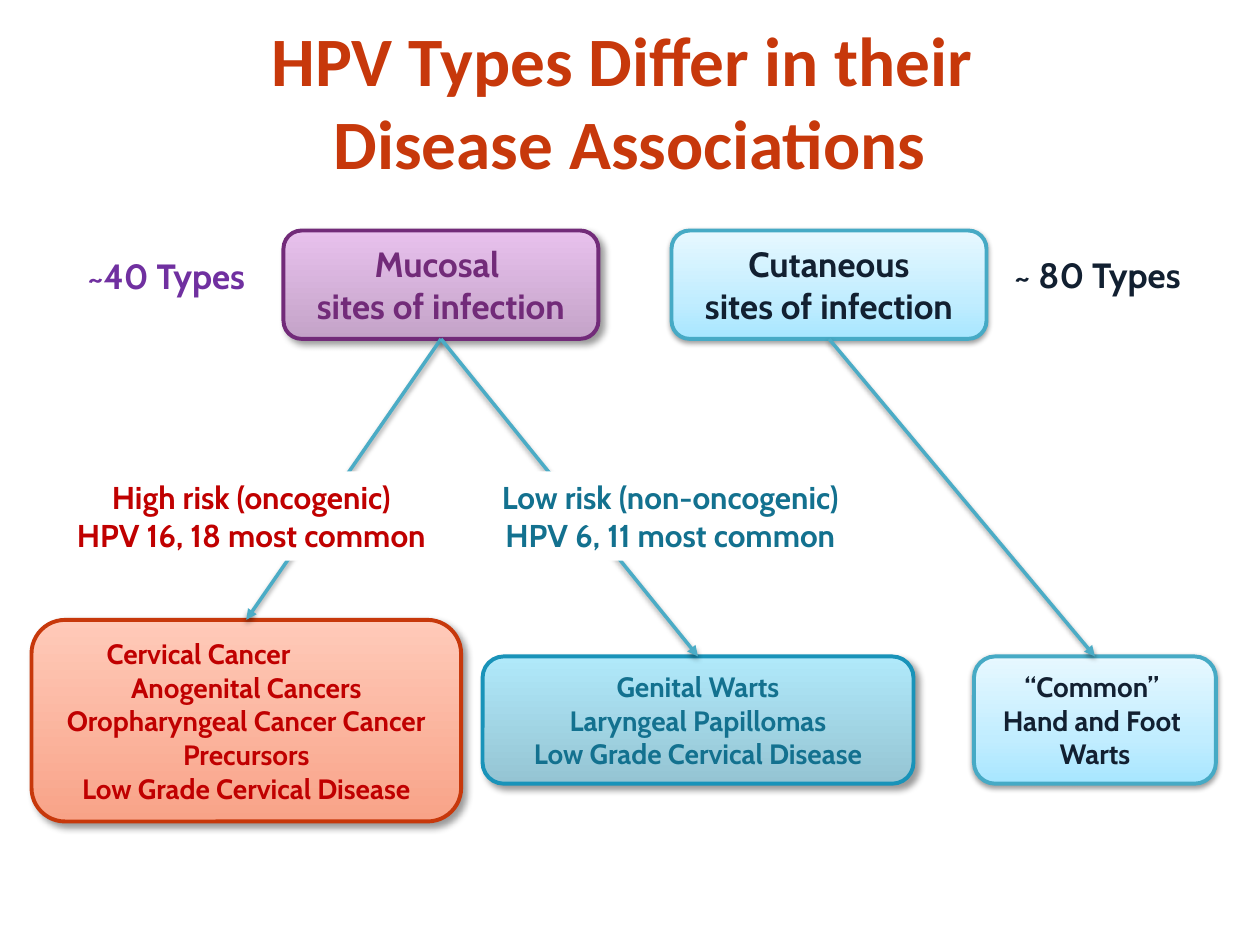
from pptx import Presentation
from pptx import util as u
from pptx.dml.color import RGBColor
from pptx.enum import shapes, text
from pptx.oxml import parse_xml
from pptx.oxml.ns import nsdecls, qn

# Content: a paragraph is a list of lines
TITLE = [["HPV Types Differ in their ", "Disease Associations"]]
SOFT = (38, 3.1, 1.6, 90)   # shadow: opacity %, blur pt, distance pt, angle
DEEP = (40, 4, 3, 45)
PALE_BLUE = [(0, "A7E6FF"), (35, "C1EDFF"), (100, "E7F8FF")]
BOXES = {
    "mucosal": dict(at=(2.25, 1.83, 2.5, 0.86), size=20, color="722B79", line="722B79",
                    stops=[(0, "C4A3C8"), (100, "E8C1ED")], shadow=DEEP, wrap=False,
                    paras=[["Mucosal "], ["sites of infection"]]),
    "cutaneous": dict(at=(5.33, 1.83, 2.5, 0.86), size=20, color="122031", line="46AAC5",
                      stops=PALE_BLUE, shadow=SOFT, wrap=False,
                      paras=[["Cutaneous"], ["sites of infection"]]),
    "common warts": dict(at=(7.73, 5.21, 1.92, 1.01), size=16, color="122031", line="46AAC5",
                         stops=PALE_BLUE, shadow=SOFT, wrap=False,
                         paras=[["“Common” ", "Hand and Foot "], ["Warts"]]),
    "low risk": dict(at=(3.83, 5.21, 3.42, 1.01), size=16, color="13718F", line="1993B9",
                     stops=[(0, "95C4D3"), (100, "B0E9FA")], shadow=DEEP, wrap=True,
                     paras=[["Genital Warts"], ["Laryngeal Papillomas"],
                            ["Low Grade Cervical Disease"]]),
    "high risk": dict(at=(0.25, 4.92, 3.41, 1.6), size=16, color="C00000", line="C7380B",
                      stops=[(0, "F8A388"), (100, "FFCAB9")], shadow=DEEP, wrap=True,
                      paras=[["Cervical Cancer"],
                             ["Anogenital Cancers", "Oropharyngeal Cancer Cancer", "Precursors"],
                             ["Low Grade Cervical Disease"]]),
}
ARROWS = [("mucosal", "high risk"), ("mucosal", "low risk"), ("cutaneous", "common warts")]
RISK_LABELS = [
    ((0.33, 3.74, 3.33, 0.71), "C00000", [["High risk (oncogenic)", "HPV 16, 18 most common"]]),
    ((3.66, 3.74, 3.32, 0.71), "13718F", [["Low risk (non-oncogenic)", "HPV 6, 11 most common"]]),
]
COUNTS = [
    ((0.54, 1.97, 1.62, 0.44), "7030A0", [["~40 Types "]]),
    ((7.75, 1.96, 1.92, 0.44), "122031", [["~ 80 Types"]]),
]


def rgb(value):
    return RGBColor.from_string(value)


def inches(at):
    return [u.Inches(value) for value in at]


def write(shape, paras, size, color, font="Cabin", wrap=True):
    frame = shape.text_frame
    frame.word_wrap = wrap
    frame.vertical_anchor = text.MSO_ANCHOR.MIDDLE
    for i, lines in enumerate(paras):
        para = frame.paragraphs[0] if i == 0 else frame.add_paragraph()
        para.alignment = text.PP_ALIGN.CENTER
        for j, line in enumerate(lines):
            if j:
                para.add_line_break()
            span = para.add_run()
            span.text = line
            span.font.name, span.font.size, span.font.bold = font, u.Pt(size), True
            span.font.color.rgb = rgb(color)


def indent_first(shape, indent):
    """Left-align the first paragraph at an indent; the others keep none."""
    for i, para in enumerate(shape.text_frame.paragraphs):
        margin = 0 if i else u.Inches(indent)
        properties = para._p.get_or_add_pPr()
        properties.set("marL", str(margin))
        properties.set("indent", "0")
    shape.text_frame.paragraphs[0].alignment = text.PP_ALIGN.LEFT


def add_shadow(shape, opacity, blur, distance, angle):
    properties = shape._element.spPr
    for old in properties.findall(qn("a:effectLst")):
        properties.remove(old)
    properties.append(parse_xml(
        f'<a:effectLst {nsdecls("a")}><a:outerShdw blurRad="{u.Pt(blur)}" dist="{u.Pt(distance)}"'
        f' dir="{angle * 60000}" rotWithShape="0"><a:srgbClr val="000000">'
        f'<a:alpha val="{opacity * 1000}"/></a:srgbClr></a:outerShdw></a:effectLst>'))


def fill_gradient(shape, stops):
    shape.fill.gradient()
    shape.fill.gradient_angle = 90   # first stop at the bottom
    stop_list = shape._element.spPr.find(".//" + qn("a:gsLst"))
    for old in list(stop_list):
        stop_list.remove(old)
    for position, color in stops:
        stop_list.append(parse_xml(f'<a:gs {nsdecls("a")} pos="{position * 1000}">'
                                   f'<a:srgbClr val="{color}"/></a:gs>'))


def add_box(page, at, paras, size, color, line, stops, shadow, wrap):
    box = page.shapes.add_shape(shapes.MSO_SHAPE.ROUNDED_RECTANGLE, *inches(at))
    fill_gradient(box, stops)
    box.line.color.rgb = rgb(line)
    box.line.width = u.Pt(2.25)
    add_shadow(box, *shadow)
    write(box, paras, size, color, wrap=wrap)
    return box


def add_arrow(page, start, end):
    arrow = page.shapes.add_connector(shapes.MSO_CONNECTOR.STRAIGHT, 0, 0, 0, 0)
    arrow.begin_connect(start, 2)
    arrow.end_connect(end, 0)
    arrow.line.color.rgb = rgb("4BACC6")
    arrow.line.width = u.Pt(2)
    arrow.line._get_or_add_ln().append(parse_xml(f'<a:tailEnd {nsdecls("a")} type="triangle"/>'))
    add_shadow(arrow, *SOFT)


def main():
    deck = Presentation()
    deck.slide_width, deck.slide_height = u.Inches(10), u.Inches(7.5)
    page = deck.slides.add_slide(deck.slide_layouts[6])

    # Title and type counts
    title = page.shapes.add_textbox(*inches((0.5, 0.17, 9, 1.25)))
    write(title, TITLE, 39.6, "C7380B", font="Calibri")
    for at, color, paras in COUNTS:
        write(page.shapes.add_textbox(*inches(at)), paras, 20, color)

    # Boxes, joined by arrows
    boxes = {name: add_box(page, **box) for name, box in BOXES.items()}
    indent_first(boxes["high risk"], 0.42)
    for start, end in ARROWS:
        add_arrow(page, boxes[start], boxes[end])

    # Risk labels cover the middle of the arrows
    for at, color, paras in RISK_LABELS:
        label = page.shapes.add_shape(shapes.MSO_SHAPE.RECTANGLE, *inches(at))
        label.shadow.inherit = False
        label.fill.solid()
        label.fill.fore_color.rgb = rgb("FFFFFF")
        label.line.fill.background()
        write(label, paras, 18, color)

    deck.save("out.pptx")


if __name__ == "__main__":
    main()
